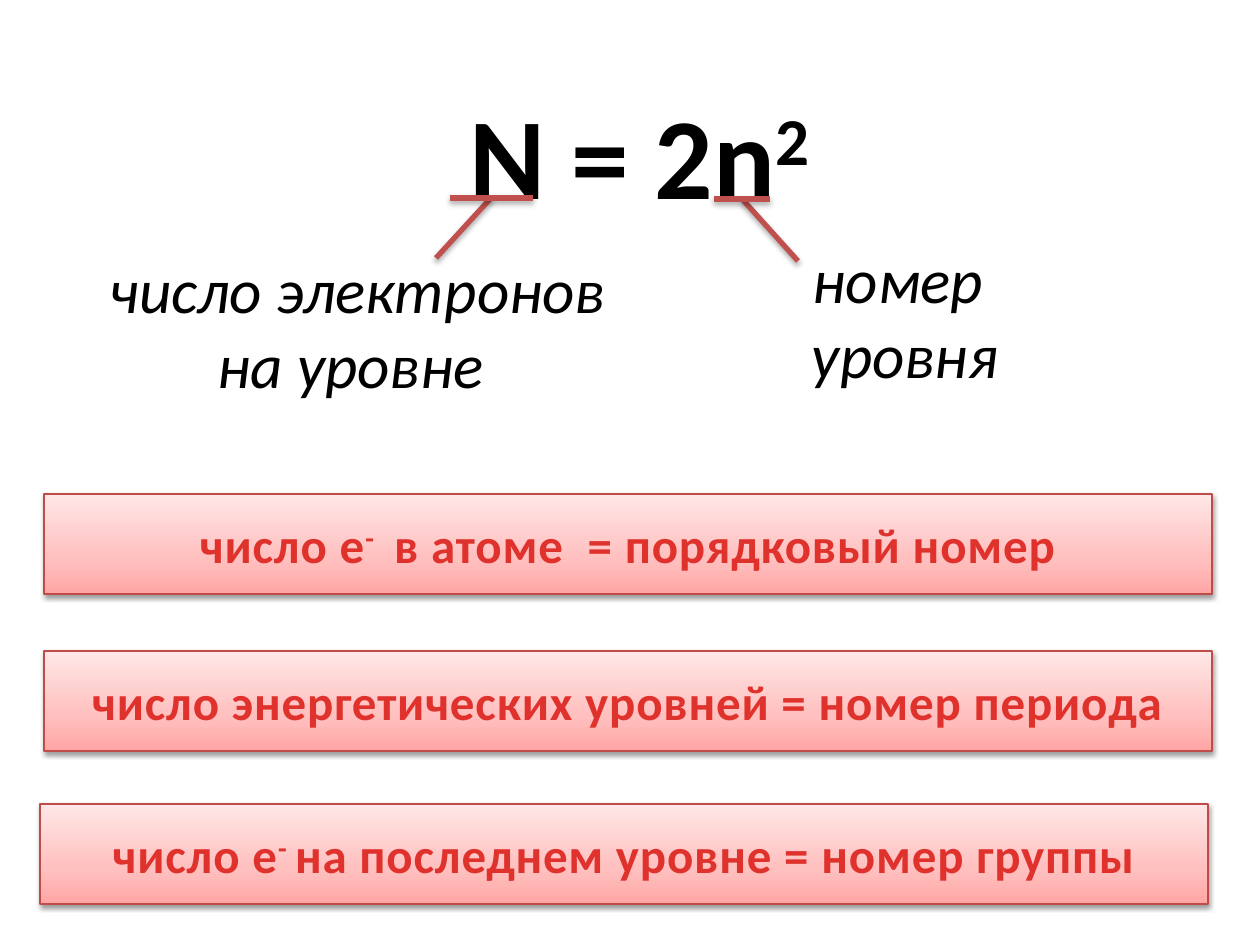
import lxml.etree
import pptx
import pptx.dml.color
import pptx.enum.shapes
import pptx.enum.text
import pptx.oxml
import pptx.oxml.ns
import pptx.util

RGBColor = pptx.dml.color.RGBColor
BLACK = RGBColor(0x00, 0x00, 0x00)
RED = RGBColor(0xE0, 0x32, 0x2D)
BORDER = RGBColor(0xBF, 0x4C, 0x48)
ACCENT = RGBColor(0xC0, 0x50, 0x4D)
BOX_STOPS = (
    (0, RGBColor(0xFF, 0xA6, 0xA5)),
    (35, RGBColor(0xFF, 0xC0, 0xBF)),
    (100, RGBColor(0xFF, 0xE7, 0xE7)),
)
CENTER = pptx.enum.text.PP_ALIGN.CENTER
TOP = pptx.enum.text.MSO_ANCHOR.TOP
MIDDLE = pptx.enum.text.MSO_ANCHOR.MIDDLE
NO_AUTOFIT = pptx.enum.text.MSO_AUTO_SIZE.NONE


def px(length):
    """Turn a length in px into EMU."""
    return pptx.util.Emu(round(length * 914400 / 126))


class SlideBuilder:
    """Holds the style and the current slide."""

    font_name = "Calibri"

    def __init__(self, presentation):
        self.slide = presentation.slides.add_slide(presentation.slide_layouts[5])

    def add_runs(self, paragraph, parts, size, color, bold=False, italic=False, spacing=0):
        """Add runs that alternate between normal and superscript."""
        paragraph.alignment = CENTER
        for index, text in enumerate(parts):
            run = paragraph.add_run()
            run.text = text
            run.font.name = self.font_name
            run.font.size = pptx.util.Pt(size)
            run.font.bold = bold
            run.font.italic = italic
            run.font.color.rgb = color
            properties = run._r.get_or_add_rPr()
            if spacing:
                properties.set("spc", str(spacing))
            if index % 2:
                properties.set("baseline", "30000")

    def add_shadow(self, shape, distance, opacity):
        """Give a shape a soft shadow straight below it."""
        shape._element.spPr.append(pptx.oxml.parse_xml(
            f'<a:effectLst {pptx.oxml.ns.nsdecls("a")}>'
            f'<a:outerShdw blurRad="40000" dist="{distance}" dir="5400000" rotWithShape="0">'
            f'<a:srgbClr val="000000"><a:alpha val="{opacity * 1000}"/></a:srgbClr>'
            '</a:outerShdw></a:effectLst>'))

    def add_title(self, left, top, width, height, parts):
        """Place the formula in the title placeholder."""
        title = self.slide.shapes.title
        title.left, title.top, title.width, title.height = map(px, (left, top, width, height))
        frame = title.text_frame
        frame.auto_size = NO_AUTOFIT
        frame.vertical_anchor = TOP
        self.add_runs(frame.paragraphs[0], parts, 66, BLACK, bold=True)

    def add_rule_box(self, left, top, width, height, parts):
        """Add a gradient rectangle that states one rule."""
        shape = self.slide.shapes.add_shape(
            pptx.enum.shapes.MSO_SHAPE.RECTANGLE, *map(px, (left, top, width, height)))
        shape.fill.gradient()
        shape.fill.gradient_angle = 90
        stops = shape._element.spPr.find(".//" + pptx.oxml.ns.qn("a:gsLst"))
        stops.clear()
        for position, color in BOX_STOPS:
            stop = lxml.etree.SubElement(
                stops, pptx.oxml.ns.qn("a:gs"), pos=str(position * 1000))
            lxml.etree.SubElement(stop, pptx.oxml.ns.qn("a:srgbClr"), val=str(color))
        shape.line.color.rgb = BORDER
        shape.line.width = pptx.util.Pt(0.75)
        self.add_shadow(shape, 20000, 38)
        frame = shape.text_frame
        frame.word_wrap = True
        frame.vertical_anchor = MIDDLE
        self.add_runs(frame.paragraphs[0], parts, 28, RED, bold=True, spacing=50)

    def add_label(self, left, top, width, height, lines):
        """Add an italic explanation of one symbol."""
        frame = self.slide.shapes.add_textbox(
            *map(px, (left, top, width, height))).text_frame
        frame.word_wrap = False
        for index, line in enumerate(lines):
            paragraph = frame.add_paragraph() if index else frame.paragraphs[0]
            self.add_runs(paragraph, [line], 36, BLACK, italic=True)

    def add_line(self, *ends):
        """Add a straight line from one point to another."""
        connector = self.slide.shapes.add_connector(
            pptx.enum.shapes.MSO_CONNECTOR.STRAIGHT, *map(px, ends))
        connector.line.color.rgb = ACCENT
        connector.line.width = pptx.util.Pt(3)
        self.add_shadow(connector, 23000, 35)


def main():
    presentation = pptx.Presentation()
    presentation.slide_width = px(1260)
    presentation.slide_height = px(945)
    builder = SlideBuilder(presentation)

    builder.add_title(32, 78, 1230, 193, ["N = 2n", "2 "])

    for left, top, parts in (
        (44, 494, ["число e", "- ", " в атоме  = порядковый номер"]),
        (44, 651, ["число энергетических уровней = номер периода"]),
        (40, 804, ["число e", "- ", "на последнем уровне = номер группы"]),
    ):
        builder.add_rule_box(left, top, 1168, 100, parts)

    builder.add_label(798, 234, 214, 165, ["номер ", "уровня"])
    builder.add_label(87, 244, 541, 165, ["число электронов", "на уровне "])

    for ends in (
        (743, 200, 798, 261),
        (491, 198, 436, 258),
        (533, 198, 450, 198),
        (770, 199, 714, 199),
    ):
        builder.add_line(*ends)

    presentation.save("out.pptx")


if __name__ == "__main__":
    main()
